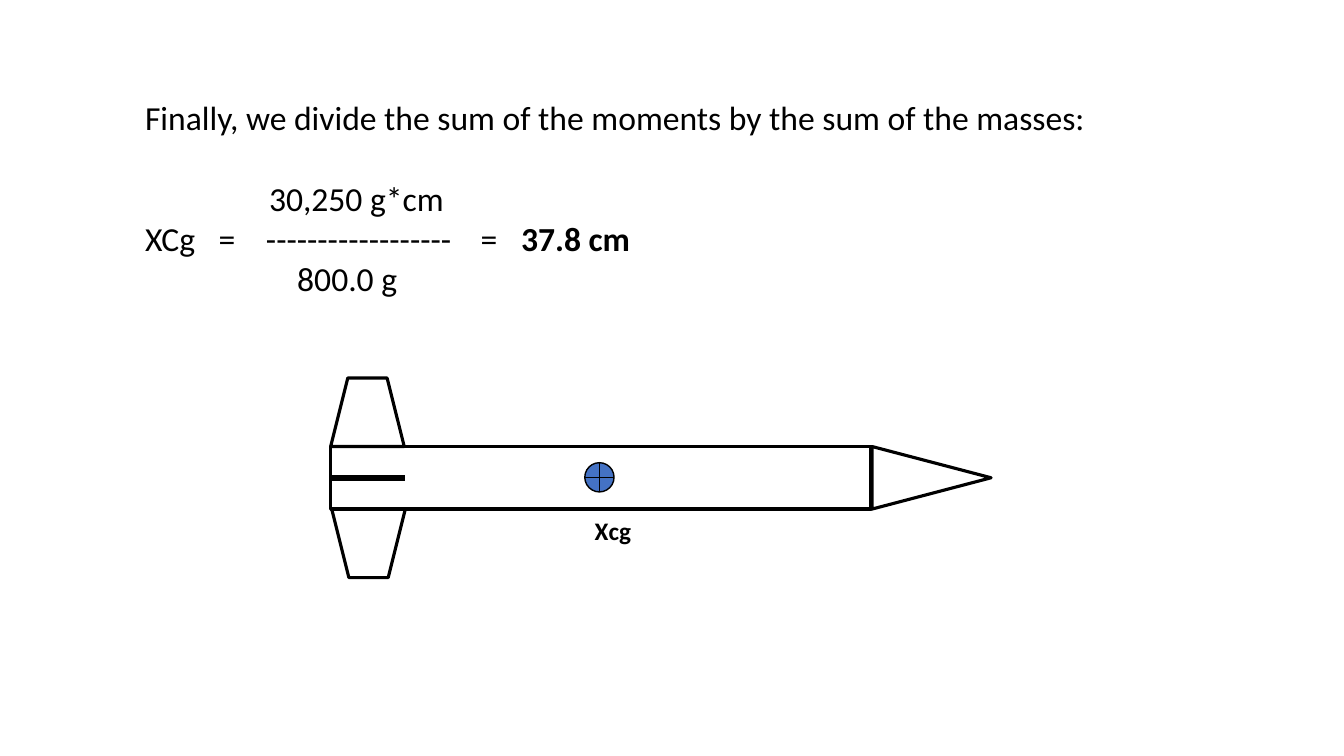
from lxml.etree import SubElement
from pptx import Presentation
from pptx.dml.color import RGBColor
from pptx.enum.shapes import MSO_CONNECTOR, MSO_SHAPE
from pptx.oxml.ns import qn
from pptx.util import Pt

EMU_PER_PX = 9144  # 100 px to the inch
FONT = "Calibri"
COLORS = {"ink": "000000", "marker": "4472C4"}


def px(length):
    return length * EMU_PER_PX


def color(name):
    return RGBColor.from_string(COLORS[name])


def format_run(run, size, bold=False):
    run.font.name = FONT
    run.font.size = Pt(size)
    run.font.bold = bold
    run.font.color.rgb = color("ink")


def add_text(shapes, box, lines, size, bold=False):
    text_box = shapes.add_textbox(*map(px, box))
    text_frame = text_box.text_frame
    text_frame.word_wrap = True
    text_frame.text = "\n".join(lines)
    for paragraph in text_frame.paragraphs:
        for run in paragraph.runs:
            format_run(run, size, bold)
    return text_frame


def set_tabs(paragraph, stops):
    """Give the paragraph left tab stops, in px from the text edge."""
    tab_list = SubElement(paragraph._p.get_or_add_pPr(), qn("a:tabLst"))
    for stop in stops:
        SubElement(tab_list, qn("a:tab"), pos=str(px(stop)), algn="l")


def add_part(shapes, preset, box, rotation=0, fill=None, weight=2.25):
    shape = shapes.add_shape(preset, *map(px, box))
    shape.rotation = rotation
    shape.shadow.inherit = False
    if fill:
        shape.fill.solid()
        shape.fill.fore_color.rgb = color(fill)
    else:
        shape.fill.background()
    shape.line.color.rgb = color("ink")
    shape.line.width = Pt(weight)
    return shape


def add_edge_on_fin(shapes, body, start, end):
    fin = shapes.add_connector(MSO_CONNECTOR.STRAIGHT, *map(px, start + end))
    fin.begin_connect(body, 1)
    fin.line.color.rgb = color("ink")
    fin.line.width = Pt(4.5)
    SubElement(fin._element.spPr, qn("a:effectLst"))


def add_calculation(slide):
    lines = [
        "Finally, we divide the sum of the moments by the sum of the masses:",
        "\t30,250 g*cm",
        "XCg\t=\t------------------\t=\t",
        "\t800.0 g",
    ]
    text_frame = add_text(slide.shapes, (134, 91, 973, 212), lines, 24)
    _, numerator, equation, denominator = text_frame.paragraphs
    numerator.space_before = Pt(29)
    set_tabs(numerator, [123])
    set_tabs(equation, [73, 120, 333, 373])
    set_tabs(denominator, [151])
    result = equation.add_run()
    result.text = "37.8 cm"
    format_run(result, 24, bold=True)


def add_rocket(slide):
    shapes = slide.shapes.add_group_shape().shapes
    body = add_part(shapes, MSO_SHAPE.RECTANGLE, (328, 443, 536, 62))
    add_part(shapes, MSO_SHAPE.ISOSCELES_TRIANGLE, (893, 415, 62, 118), 90)
    for left, top, rotation in [(328, 375, 0), (329, 505, 180)]:
        add_part(shapes, MSO_SHAPE.TRAPEZOID, (left, top, 73, 68), rotation)
    add_edge_on_fin(shapes, body, (328, 474), (402, 474))
    add_part(shapes, MSO_SHAPE.FLOWCHART_OR, (580, 459, 29, 29),
             fill="marker", weight=1)
    add_text(shapes, (580, 506, 103, 40), ["Xcg"], 18, bold=True)


def main():
    presentation = Presentation()
    presentation.slide_width = px(1333)
    presentation.slide_height = px(750)
    slide = presentation.slides.add_slide(presentation.slide_layouts[6])
    add_calculation(slide)
    add_rocket(slide)
    presentation.save("out.pptx")


if __name__ == "__main__":
    main()
